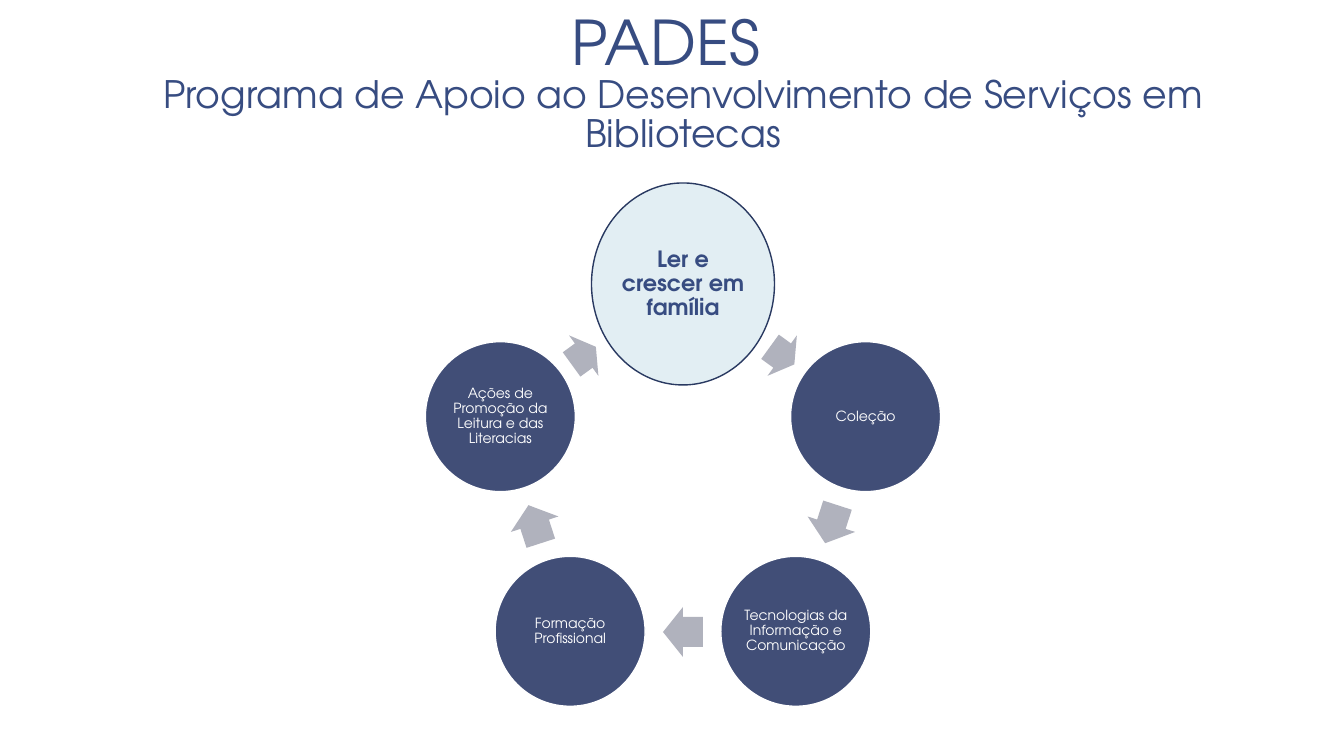
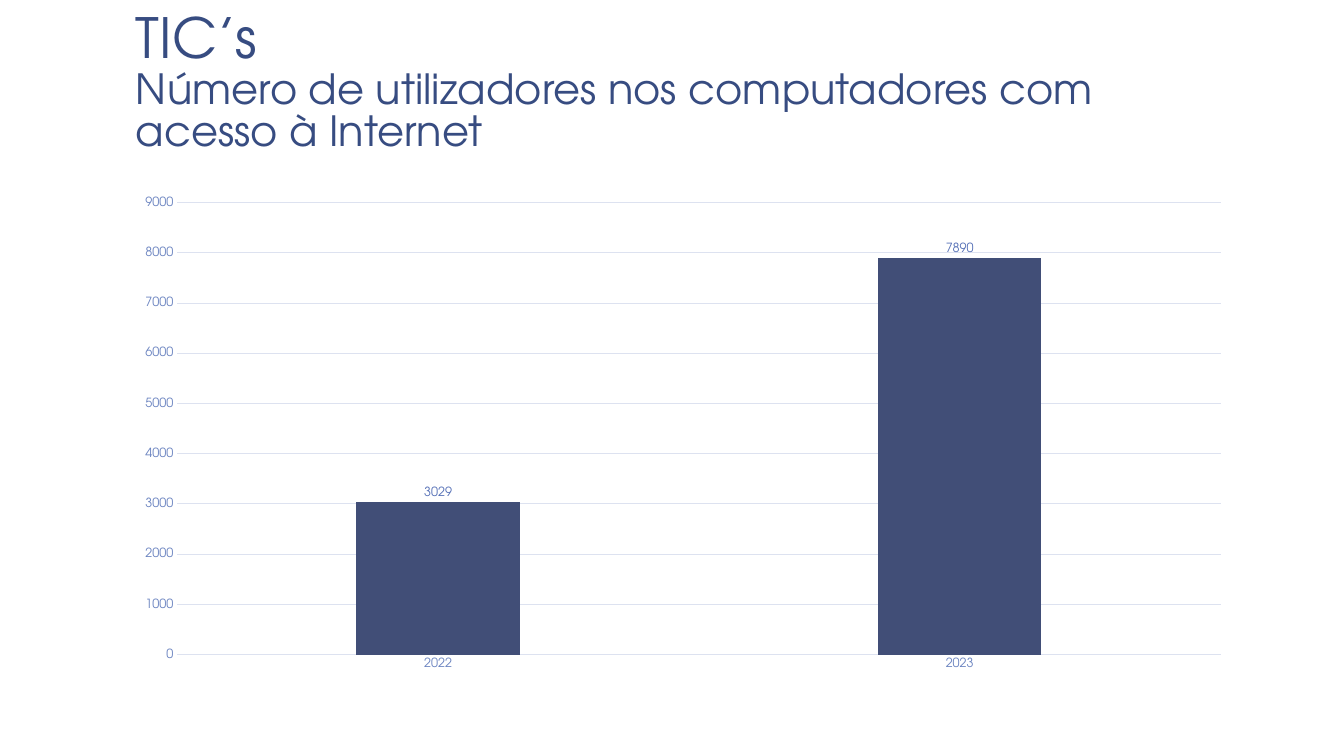
"""Builds two library slides: a programme cycle and a column chart of users."""
import math

import pptx
import pptx.chart.data
import pptx.dml.color
import pptx.enum.chart
import pptx.enum.shapes
import pptx.enum.text
import pptx.util

RGBColor = pptx.dml.color.RGBColor
SHAPES = pptx.enum.shapes.MSO_SHAPE
ALIGN = pptx.enum.text.PP_ALIGN
ANCHOR = pptx.enum.text.MSO_ANCHOR

EMU_PER_PX = 914400 / 100.8
FONT = "TeX Gyre Adventor"
TITLE_BLUE = RGBColor(0x37, 0x4C, 0x81)
NODE_BLUE = RGBColor(0x41, 0x4E, 0x77)
TOP_FILL = RGBColor(0xE2, 0xEE, 0xF3)
TOP_LINE = RGBColor(0x29, 0x39, 0x61)
ARROW_GREY = RGBColor(0xB0, 0xB2, 0xBD)
AXIS_BLUE = RGBColor(0x6A, 0x83, 0xC0)
LABEL_BLUE = RGBColor(0x54, 0x6F, 0xB6)
GRID_BLUE = RGBColor(0xDD, 0xE2, 0xF0)
WHITE = RGBColor(0xFF, 0xFF, 0xFF)

TITLE_BOX = (123, 8, 1120, 154)
RING_BOX = (424, 183, 518, 526)
CHART_BOX = (123, 187, 1120, 493)

RING_RADIUS = 192
ARROW_RADIUS = 156
NODE_SIZE = (150, 150)
TOP_SIZE = (183, 202)
NODES = [
    "Ler e crescer em família",
    "Coleção",
    "Tecnologias da Informação e Comunicação",
    "Formação Profissional",
    "Ações de Promoção da Leitura e das Literacias",
]
ARROWS = [(39.5, 30), (108, 40), (180, 40), (252, 40), (320.5, 30)]


def px(*lengths):
    """Turn pixel lengths into a list of EMU lengths."""
    return [pptx.util.Emu(round(length * EMU_PER_PX)) for length in lengths]


def apply(target, values):
    """Set every attribute named in a dict of format values."""
    for name, value in values.items():
        setattr(target, name, value)


def style_font(font, size, color, bold=False):
    """Give a font the deck typeface with a size, colour and weight."""
    apply(font, {"name": FONT, "size": pptx.util.Pt(size), "bold": bold})
    font.color.rgb = color


def style_frame(frame, anchor, side, end):
    """Set wrapping, anchor and insets of a text frame."""
    side, end = px(side, end)
    apply(frame, {
        "word_wrap": True, "vertical_anchor": anchor,
        "margin_left": side, "margin_right": side,
        "margin_top": end, "margin_bottom": end,
    })


def style_line(line, color, width):
    """Give a line a colour and a width in points."""
    line.color.rgb = color
    line.width = pptx.util.Pt(width)


def add_title(page, box, lines, alignment):
    """Place a heading and its subtitle, given as (text, size) lines."""
    frame = page.shapes.add_textbox(*px(*box)).text_frame
    style_frame(frame, ANCHOR.BOTTOM, 13, 7)
    para = frame.paragraphs[0]
    apply(para, {"alignment": alignment, "line_spacing": 0.85})
    for index, (text, size) in enumerate(lines):
        if index:
            para.add_line_break()
        span = para.add_run()
        span.text = text
        style_font(span.font, size, TITLE_BLUE)


def add_centred(page, kind, centre, size, fill):
    """Place a plain filled shape around a centre point."""
    left, top = (middle - length / 2 for middle, length in zip(centre, size))
    shape = page.shapes.add_shape(kind, *px(left, top, *size))
    shape.shadow.inherit = False
    shape.fill.solid()
    shape.fill.fore_color.rgb = fill
    return shape


def add_node(page, centre, text, is_top):
    """Place one captioned circle of the ring."""
    size, fill, outline, points, ink = (
        (TOP_SIZE, TOP_FILL, TOP_LINE, 16, TITLE_BLUE) if is_top
        else (NODE_SIZE, NODE_BLUE, WHITE, 10, WHITE))
    node = add_centred(page, SHAPES.OVAL, centre, size, fill)
    style_line(node.line, outline, 1)
    style_frame(node.text_frame, ANCHOR.MIDDLE, 1, 1)
    para = node.text_frame.paragraphs[0]
    apply(para, {"alignment": ALIGN.CENTER, "line_spacing": 0.9})
    span = para.add_run()
    span.text = text
    style_font(span.font, points, ink, is_top)


def add_arrow(page, centre, length, rotation):
    """Place one arrow of the ring."""
    arrow = add_centred(page, SHAPES.RIGHT_ARROW, centre, (length, 50), ARROW_GREY)
    arrow.line.fill.background()
    arrow.adjustments[0] = 0.6
    arrow.adjustments[1] = 15 / length if length < 30 else 0.5
    arrow.rotation = rotation


def add_ring(page, box):
    """Place the cycle of circles and arrows in a box."""
    left, top, width, _ = box
    middle_x = left + width / 2
    middle_y = top + TOP_SIZE[1] / 2 + RING_RADIUS

    def at(bearing, radius):
        """Give the point at a clockwise bearing from the top."""
        angle = math.radians(bearing)
        return middle_x + radius * math.sin(angle), middle_y - radius * math.cos(angle)

    step = 360 / len(NODES)
    for index, (text, (bearing, length)) in enumerate(zip(NODES, ARROWS)):
        add_node(page, at(index * step, RING_RADIUS), text, index == 0)
        add_arrow(page, at(bearing, ARROW_RADIUS), length, (index + 0.5) * step)


def add_user_chart(page, box):
    """Place the column chart of computer users in a box."""
    data = pptx.chart.data.CategoryChartData()
    data.categories = ["2022", "2023"]
    data.add_series("Series 1", [3029, 7890])
    kind = pptx.enum.chart.XL_CHART_TYPE.COLUMN_CLUSTERED
    chart = page.shapes.add_chart(kind, *px(*box), data).chart
    apply(chart, {"has_legend": False, "has_title": False})
    style_font(chart.font, 10, TITLE_BLUE)

    plot = chart.plots[0]
    apply(plot, {"gap_width": 219, "vary_by_categories": False, "has_data_labels": True})
    apply(plot.data_labels, {
        "show_value": True,
        "position": pptx.enum.chart.XL_LABEL_POSITION.OUTSIDE_END,
    })
    style_font(plot.data_labels.font, 9, LABEL_BLUE)
    columns = plot.series[0].format.fill
    columns.solid()
    columns.fore_color.rgb = NODE_BLUE

    no_tick = pptx.enum.chart.XL_TICK_MARK.NONE
    for axis in (chart.category_axis, chart.value_axis):
        apply(axis, {"major_tick_mark": no_tick, "minor_tick_mark": no_tick})
        style_font(axis.tick_labels.font, 9, AXIS_BLUE)
    style_line(chart.category_axis.format.line, GRID_BLUE, 0.75)
    apply(chart.value_axis, {"minimum_scale": 0, "maximum_scale": 9000, "major_unit": 1000})
    chart.value_axis.format.line.fill.background()
    style_line(chart.value_axis.major_gridlines.format.line, GRID_BLUE, 0.75)


def add_programme_page(page):
    """Fill the slide about the support programme."""
    add_title(page, TITLE_BOX, [
        ("PADES  ", 44),
        ("Programa de Apoio ao Desenvolvimento de Serviços em Bibliotecas", 27),
    ], ALIGN.CENTER)
    add_ring(page, RING_BOX)


def add_users_page(page):
    """Fill the slide about computer users."""
    add_title(page, TITLE_BOX, [
        ("TIC’s", 39.6),
        ("Número de utilizadores nos computadores com acesso à Internet", 29.7),
    ], ALIGN.LEFT)
    add_user_chart(page, CHART_BOX)


def main():
    """Build and save the deck."""
    deck = pptx.Presentation()
    deck.slide_width, deck.slide_height = px(1344, 756)
    for fill_page in (add_programme_page, add_users_page):
        fill_page(deck.slides.add_slide(deck.slide_layouts[6]))
    deck.save("out.pptx")


if __name__ == "__main__":
    main()
